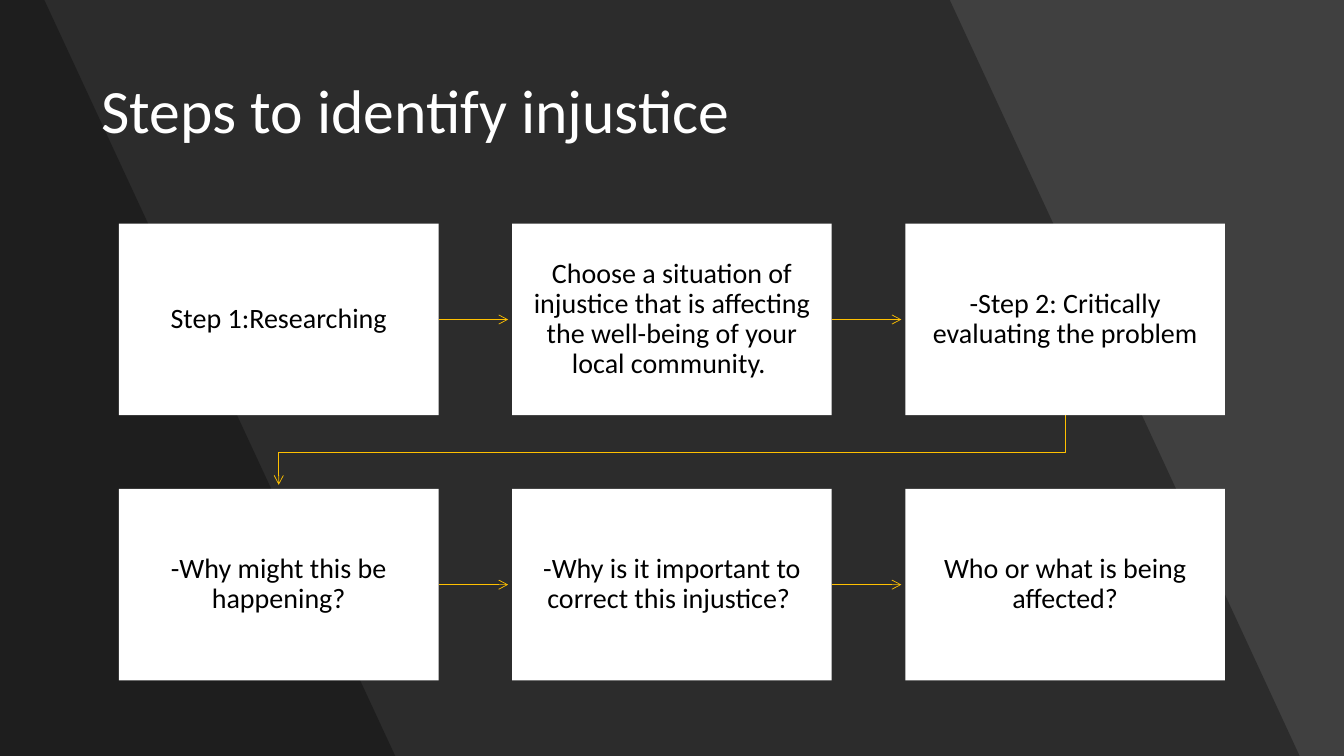
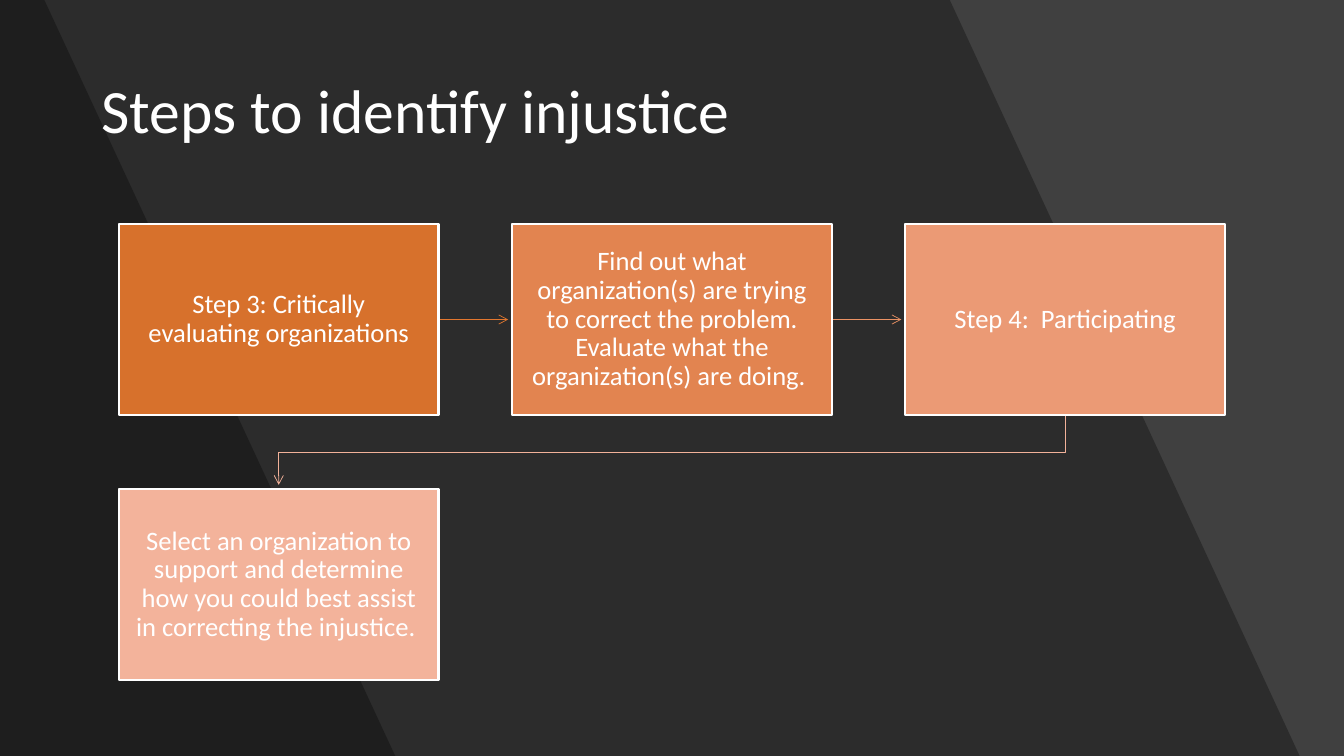
from dataclasses import dataclass

from lxml import etree
from pptx import Presentation
from pptx.dml.color import RGBColor
from pptx.enum import shapes, text
from pptx.oxml import ns
from pptx.util import Inches, Pt


@dataclass(frozen=True)
class Theme:
    """Colours, font and type sizes shared by the slides."""
    font: str = "Calibri"
    background: str = "404040"
    band: str = "000000"
    band_alpha: int = 30
    light: str = "FFFFFF"
    dark: str = "000000"
    gold: str = "FFC000"
    title_size: int = 44
    arrow_width: float = 0.5
    border_width: float = 1.5


THEME = Theme()
WIDTH, HEIGHT = 13.33, 7.5
COLUMNS = 3
LEFT, TOP = 1.18, 2.22
BOX_W, BOX_H = 3.17, 1.9
PITCH_X, PITCH_Y = 3.9, 2.63
ARROW_GAP = 0.04
TITLE = "Steps to identify injustice"

RESEARCH_STEPS = [
    "Step 1:Researching",
    "Choose a situation of injustice that is affecting the well-being of your local community. ",
    "-Step 2: Critically evaluating the problem",
    "-Why might this be happening?",
    "-Why is it important to correct this injustice? ",
    "Who or what is being affected?",
]
ACTION_STEPS = [
    "Step 3: Critically evaluating organizations",
    "Find out what organization(s) are trying to correct the problem. "
    "Evaluate what the organization(s) are doing. ",
    "Step 4:  Participating",
    "Select an organization to support and determine how you could best assist "
    "in correcting the injustice. ",
]
ACTION_FILLS = ["D7712C", "E28450", "EB9A75", "F3B39B"]
ACTION_ARROWS = ["E2772F", "EB9264", "F3B29A"]


def rgb(value):
    """Turn a hex string into a colour."""
    return RGBColor.from_string(value)


def add_child(parent, tag, **attrs):
    """Append a DrawingML element."""
    return etree.SubElement(parent, ns.qn(tag), attrs)


def set_text(sp, content, size, color, align=text.PP_ALIGN.LEFT, inset=0.1):
    """Write one formatted, vertically centred paragraph in a shape."""
    tf = sp.text_frame
    tf.word_wrap = True
    tf.vertical_anchor = text.MSO_ANCHOR.MIDDLE
    tf.margin_left = tf.margin_right = Inches(inset)
    tf.margin_top = tf.margin_bottom = Inches(min(inset, 0.16))
    p = tf.paragraphs[0]
    p.alignment = align
    p.line_spacing = 0.9
    r = p.add_run()
    r.text = content
    r.font.name = THEME.font
    r.font.size = Pt(size)
    r.font.color.rgb = rgb(color)


def add_path(s, points, close):
    """Draw a freeform through points given in inches."""
    start, *rest = [(Inches(x), Inches(y)) for x, y in points]
    builder = s.shapes.build_freeform(*start)
    builder.add_line_segments(rest, close=close)
    sp = builder.convert_to_shape()
    sp.shadow.inherit = False
    return sp


def add_band(s, top_x, bottom_x):
    """Draw a translucent slanted band from the left edge."""
    sp = add_path(s, [(0, 0), (top_x, 0), (bottom_x, HEIGHT), (0, HEIGHT)], True)
    sp.fill.solid()
    sp.fill.fore_color.rgb = rgb(THEME.band)
    color = sp.fill._xPr.find(".//" + ns.qn("a:srgbClr"))
    add_child(color, "a:alpha", val=str(THEME.band_alpha * 1000))
    sp.line.fill.background()


def style_arrow(sp, color):
    """Give a line its colour, width and arrowhead."""
    sp.line.color.rgb = rgb(color)
    sp.line.width = Pt(THEME.arrow_width)
    add_child(sp.line._get_or_add_ln(), "a:tailEnd", type="arrow")


def add_arrow(s, x1, y1, x2, y2, color):
    """Draw a straight arrow without shadow."""
    sp = s.shapes.add_connector(
        shapes.MSO_CONNECTOR.STRAIGHT, Inches(x1), Inches(y1), Inches(x2), Inches(y2))
    style_arrow(sp, color)
    add_child(sp._element.spPr, "a:effectLst")


def add_wrap_arrow(s, x1, y1, x2, y2, color):
    """Draw an arrow that bends back to the start of the next row."""
    mid = (y1 + y2 + ARROW_GAP) / 2
    sp = add_path(s, [(x1, y1), (x1, mid), (x2, mid), (x2, y2)], False)
    sp.fill.background()
    style_arrow(sp, color)


def add_box(s, x, y, content, size, fill, color, border):
    """Draw one step box with its text."""
    sp = s.shapes.add_shape(
        shapes.MSO_SHAPE.RECTANGLE, Inches(x), Inches(y), Inches(BOX_W), Inches(BOX_H))
    sp.shadow.inherit = False
    sp.fill.solid()
    sp.fill.fore_color.rgb = rgb(fill)
    if border:
        sp.line.color.rgb = rgb(border)
        sp.line.width = Pt(THEME.border_width)
    else:
        sp.line.fill.background()
    set_text(sp, content, size, color, align=text.PP_ALIGN.CENTER, inset=0.16)


def box_origin(index):
    """Return the left and top of a box in the grid."""
    row, column = divmod(index, COLUMNS)
    return LEFT + column * PITCH_X, TOP + row * PITCH_Y


def add_flow(s, steps, fills, arrows, size, color, border=None):
    """Lay out the steps in rows and join each to the next."""
    for i, arrow in enumerate(arrows):
        x, y = box_origin(i)
        next_x, next_y = box_origin(i + 1)
        if next_y == y:
            mid = y + BOX_H / 2
            add_arrow(s, x + BOX_W, mid, next_x - ARROW_GAP, mid, arrow)
        else:
            add_wrap_arrow(s, x + BOX_W / 2, y + BOX_H,
                           next_x + BOX_W / 2, next_y - ARROW_GAP, arrow)
    for i, (content, fill) in enumerate(zip(steps, fills)):
        add_box(s, *box_origin(i), content, size, fill, color, border)


def add_slide(prs, title):
    """Add a slide with the shared background, bands and title."""
    s = prs.slides.add_slide(prs.slide_layouts[6])
    s.background.fill.solid()
    s.background.fill.fore_color.rgb = rgb(THEME.background)
    add_band(s, 9.42, 12.89)
    add_band(s, 0.44, 3.92)
    sp = s.shapes.add_textbox(Inches(0.91), Inches(0.4), Inches(11.51), Inches(1.45))
    set_text(sp, title, THEME.title_size, THEME.light)
    return s


def main():
    """Build and save the presentation."""
    prs = Presentation()
    prs.slide_width, prs.slide_height = Inches(WIDTH), Inches(HEIGHT)
    count = len(RESEARCH_STEPS)
    add_flow(add_slide(prs, TITLE), RESEARCH_STEPS, [THEME.light] * count,
             [THEME.gold] * (count - 1), size=20, color=THEME.dark)
    add_flow(add_slide(prs, TITLE), ACTION_STEPS, ACTION_FILLS, ACTION_ARROWS,
             size=19, color=THEME.light, border=THEME.light)
    prs.save("out.pptx")


if __name__ == "__main__":
    main()
